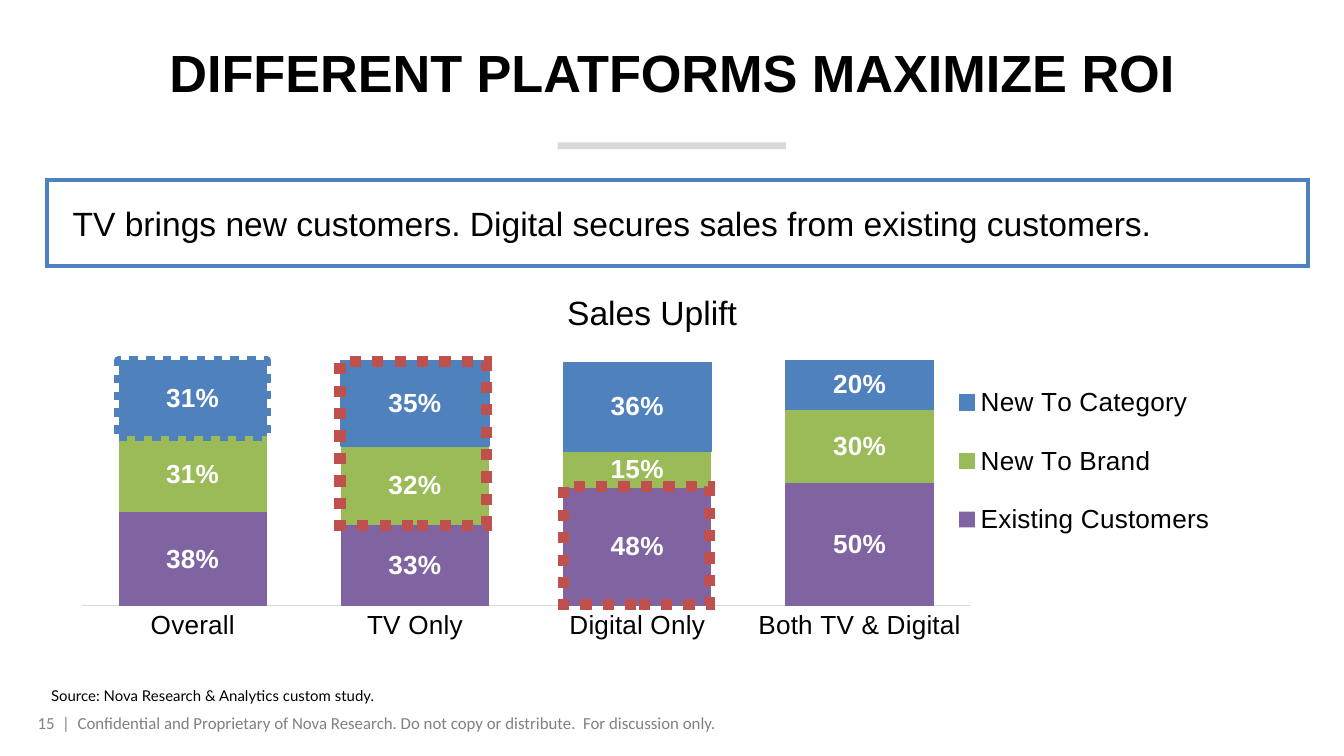
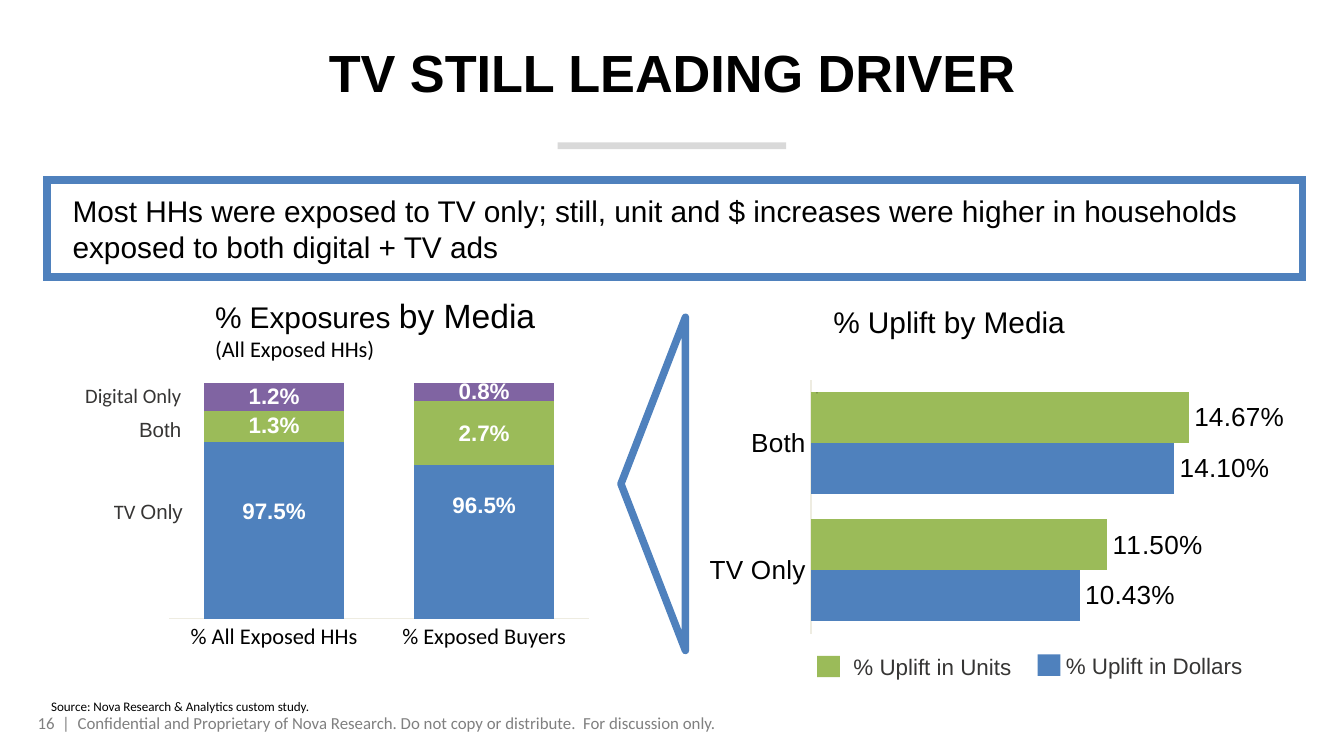
from pptx import Presentation, oxml
from pptx import util as u
from pptx.chart import data as cd
from pptx.dml import color as col
from pptx.enum import chart as ch, dml, shapes, text
from pptx.oxml import ns

# Shared look
BLUE, GREEN, PURPLE, RED = "4F81BD", "9BBB59", "8064A2", "C0504D"
BLACK, WHITE, DARK = "000000", "FFFFFF", "363534"
GREY, RULE, CREAM = "808080", "D9D9D9", "EEECE1"
FIRM = "Nova Research"
SOURCE = f"Source: {FIRM} & Analytics custom study."
TIGHT = (0.02,) * 4
NOTE = (0.04, 0.02, 0.04, 0.02)
LEFT, CENTER, RIGHT = text.PP_ALIGN.LEFT, text.PP_ALIGN.CENTER, text.PP_ALIGN.RIGHT
TOP, MIDDLE = text.MSO_ANCHOR.TOP, text.MSO_ANCHOR.MIDDLE
RECT = shapes.MSO_SHAPE.RECTANGLE


def rgb(code):
    return col.RGBColor.from_string(code)


def place(at):
    return [u.Inches(v) for v in at]


def style(font, size, name="Arial", color=BLACK, **extra):
    """Set a font from a dict of values."""
    for key, val in {"size": u.Pt(size), "name": name, **extra}.items():
        setattr(font, key, val)
    font.color.rgb = rgb(color)


def write(shape, lines, align=LEFT, anchor=TOP, ins=NOTE, wrap=True):
    """Fill a frame; each line is a list of (text, format) runs."""
    frame = shape.text_frame
    sides = ("margin_left", "margin_top", "margin_right", "margin_bottom")
    form = dict(zip(sides, place(ins)), word_wrap=wrap, vertical_anchor=anchor)
    for key, val in form.items():
        setattr(frame, key, val)
    for i, line in enumerate(lines):
        para = frame.add_paragraph() if i else frame.paragraphs[0]
        para.alignment = align
        for words, font in line:
            run = para.add_run()
            run.text = words
            style(run.font, **font)


def label(slide, at, words, size, name="Arial", color=BLACK, bold=False,
          italic=False, **frame):
    font = dict(size=size, name=name, color=color, bold=bold, italic=italic)
    write(slide.shapes.add_textbox(*place(at)), [[(words, font)]], **frame)


def trace(line, color, width, dash=None):
    line.color.rgb = rgb(color)
    line.width = u.Pt(width)
    if dash:
        line.dash_style = dash


def box(slide, at, fill=None, line=None, kind=RECT):
    shape = slide.shapes.add_shape(kind, *place(at))
    shape.shadow.inherit = False
    if fill:
        shape.fill.solid()
        shape.fill.fore_color.rgb = rgb(fill)
    else:
        shape.fill.background()
    if line:
        trace(shape.line, *line)
        if kind == RECT:  # square corners
            shape._element.spPr.find(ns.qn("a:ln")).append(oxml.parse_xml(
                f'<a:miter {ns.nsdecls("a")} lim="800000"/>'))
    else:
        shape.line.fill.background()
    return shape


def callout(slide, at, words, size, width):
    shape = box(slide, at, WHITE, (BLUE, width))
    write(shape, [[(words, dict(size=size))]], anchor=MIDDLE,
          ins=(0.19, 0.02, 0.19, 0.02))


def base(deck, title, page):
    """Add a slide with its footer, rule and title."""
    slide = deck.slides.add_slide(deck.slide_layouts[6])
    foot = (f"{page}  |  Confidential and Proprietary of {FIRM}. "
            "Do not copy or distribute.  For discussion only.")
    label(slide, (0.26, 5.28, 7.51, 0.19), foot, 9, "Calibri", GREY,
          anchor=MIDDLE, ins=TIGHT)
    box(slide, (4.15, 1.06, 1.7, 0.05), RULE)
    label(slide, (0.5, 0.23, 9, 0.6), title, 28, bold=True, align=CENTER,
          anchor=MIDDLE, ins=(0.1, 0.05, 0.1, 0.05))
    return slide


def layout(parent, index, spot, kind=""):
    """Insert a manual chart layout; spot maps tags to values."""
    for old in parent.findall(ns.qn("c:layout")):
        parent.remove(old)
    tags = "".join(f'<c:{k} val="{v}"/>' for k, v in spot.items())
    parent.insert(index, oxml.parse_xml(
        f'<c:layout {ns.nsdecls("c")}><c:manualLayout>{kind}{tags}'
        "</c:manualLayout></c:layout>"))


def area(x, y, w, h):
    return dict(xMode="edge", yMode="edge", x=x, y=y, w=w, h=h)


def graph(slide, at, kind, cats, rows, fmt, plot, span, axis, tag, pos=None):
    """Add a bar chart; rows are (name, colour, values)."""
    data = cd.CategoryChartData(number_format=fmt)
    data.categories = cats
    for name, _, vals in rows:
        data.add_series(name, vals)
    chart = slide.shapes.add_chart(kind, *place(at), data).chart
    chart.has_title = chart.has_legend = False
    style(chart.font, 14)
    layout(chart._chartSpace.xpath(".//c:plotArea")[0], 0, area(*plot),
           '<c:layoutTarget val="inner"/>')

    # Axes
    low, high = span
    form = dict(visible=False, has_major_gridlines=False,
                minimum_scale=low, maximum_scale=high)
    for key, val in form.items():
        setattr(chart.value_axis, key, val)
    cat = chart.category_axis
    cat.major_tick_mark = ch.XL_TICK_MARK.NONE
    cat.has_major_gridlines = False
    trace(cat.format.line, axis["line"], 0.75)
    style(cat.tick_labels.font, axis["size"], axis["name"])

    # Bars and their labels
    bars = chart.plots[0]
    bars.gap_width = 50
    bars.overlap = 0 if pos else 100
    bars.vary_by_categories = False
    for series, (_, color, _) in zip(bars.series, rows):
        series.format.fill.solid()
        series.format.fill.fore_color.rgb = rgb(color)
        series.invert_if_negative = False
        marks = series.data_labels
        form = dict(show_value=True, number_format=fmt,
                    number_format_is_linked=False)
        for key, val in form.items():
            setattr(marks, key, val)
        if pos:
            marks.position = pos
        style(marks.font, **tag)
        for lead in series._element.xpath(".//c:showLeaderLines"):
            lead.set("val", "0")
    return chart


def uplift(deck):
    slide = base(deck, "DIFFERENT PLATFORMS MAXIMIZE ROI", 15)
    label(slide, (0.34, 5.09, 2.56, 0.17), SOURCE, 8, "Lato", wrap=False)
    callout(slide, (0.35, 1.34, 9.38, 0.64),
            "TV brings new customers. Digital secures sales from existing "
            "customers.", 18, 2)
    chart = graph(
        slide, (0.53, 2.25, 8.56, 2.99), ch.XL_CHART_TYPE.COLUMN_STACKED,
        ("Overall", "TV Only", "Digital Only", "Both TV & Digital"),
        (("Existing Customers", PURPLE, (0.38, 0.33, 0.48, 0.5)),
         ("New To Brand", GREEN, (0.31, 0.32, 0.15, 0.3)),
         ("New To Category", BLUE, (0.31, 0.35, 0.36, 0.2))),
        "0%", (0.009, 0.022, 0.773, 0.733), (0, 1.2),
        dict(line=RULE, size=14, name="Arial"),
        dict(size=14, color=WHITE, bold=True))
    top = chart.plots[0].series[2]
    trace(top.format.line, BLUE, 0.75)
    first = top.points[0].format
    first.fill.solid()
    first.fill.fore_color.rgb = rgb(BLUE)
    dots = dml.MSO_LINE.ROUND_DOT
    trace(first.line, BLUE, 4.5, dots)

    chart.has_legend = True
    chart.legend.position = ch.XL_LEGEND_POSITION.RIGHT
    chart.legend.include_in_layout = False
    style(chart.legend.font, 14)
    layout(chart.legend._element, 1, area(0.77, 0.14, 0.23, 0.51))

    # Highlights
    for at in ((2.53, 2.69, 1.09, 1.22), (4.19, 3.62, 1.09, 0.88)):
        box(slide, at, line=(RED, 6, dots))
    label(slide, (4.2, 2.15, 1.32, 0.35), "Sales Uplift", 18,
          anchor=MIDDLE, ins=TIGHT, wrap=False)


def driver(deck):
    slide = base(deck, "TV STILL LEADING DRIVER", 16)

    # Exposure chart
    tag = dict(size=12, color=WHITE, bold=True)
    chart = graph(
        slide, (1.2, 2.57, 3.24, 2.67), ch.XL_CHART_TYPE.COLUMN_STACKED_100,
        ("% All Exposed HHs", "% Exposed Buyers"),
        (("Series 1", BLUE, (0.975, 0.965)),
         ("Series 2", GREEN, (0.013, 0.027)),
         ("Series 3", PURPLE, (0.012, 0.008))),
        "0.0%", (0.018, 0.104, 0.965, 0.658), (0.9, 1),
        dict(line=CREAM, size=12, name="Calibri"), tag)
    series = chart.plots[0].series[0]
    for i, shift in enumerate((-0.05, -0.1)):
        style(series.points[i].data_label.font, **tag)
        mark = series._element.xpath(f"c:dLbls/c:dLbl[c:idx/@val={i}]")[0]
        layout(mark, 1, dict(x=0, y=shift))

    # Uplift chart
    graph(slide, (4.77, 2.22, 5.02, 2.73), ch.XL_CHART_TYPE.BAR_CLUSTERED,
          ("TV Only", "Both"),
          (("Series 1", BLUE, (0.1043, 0.141)),
           ("Series 2", GREEN, (0.115, 0.1467))),
          "0.00%", (0.252, 0.222, 0.611, 0.693), (0, 0.16),
          dict(line=CREAM, size=14, name="Arial"), dict(size=14),
          ch.XL_LABEL_POSITION.OUTSIDE_END)

    # Row names
    tv = slide.shapes.add_textbox(*place((0.56, 3.69, 0.84, 0.22)))
    write(tv, [[("TV ", dict(size=11, name="Calibri", color=DARK)),
                ("Only", dict(size=11, color=DARK))]], align=RIGHT)
    label(slide, (0.55, 3.08, 0.84, 0.22), "Both", 11, color=DARK, align=RIGHT)
    label(slide, (0.38, 2.83, 1.01, 0.22), "Digital Only", 11, "Calibri", DARK,
          align=RIGHT)
    label(slide, (6.03, 2.87, 0.87, 0.11), "-", 4, "Calibri", DARK, italic=True)

    # Legend
    for x, y, tx, color, unit in ((7.72, 4.87, 7.89, BLUE, "Dollars"),
                                  (6.08, 4.88, 6.31, GREEN, "Units")):
        box(slide, (x, y, 0.17, 0.16), color)
        label(slide, (tx, y - 0.04, 1.59, 0.24), f"% Uplift in {unit}", 12,
              color=DARK)

    # Pointer, message and headings
    label(slide, (0.34, 5.18, 2.01, 0.16), SOURCE, 7, "Calibri", wrap=False)
    arrow = box(slide, (3.62, 3.36, 2.48, 0.48), line=(BLUE, 4),
                kind=shapes.MSO_SHAPE.ISOSCELES_TRIANGLE)
    arrow.rotation = 270
    callout(slide, (0.35, 1.34, 9.34, 0.72),
            "Most HHs were exposed to TV only; still, unit and $ increases were "
            "higher in households exposed to both digital + TV ads", 16, 4)
    head = slide.shapes.add_textbox(*place((1.58, 2.17, 2.45, 0.55)))
    write(head, [[("% Exposures ", dict(size=16)), ("by Media", dict(size=18))],
                 [("(All Exposed HHs)", dict(size=12, name="Calibri"))]],
          anchor=MIDDLE, ins=TIGHT, wrap=False)
    label(slide, (6.18, 2.24, 1.79, 0.31), "% Uplift by Media", 16,
          anchor=MIDDLE, ins=TIGHT, wrap=False)


def main():
    deck = Presentation()
    deck.slide_width, deck.slide_height = place((10, 10 * 9 / 16))
    uplift(deck)
    driver(deck)
    deck.save("out.pptx")


if __name__ == "__main__":
    main()
